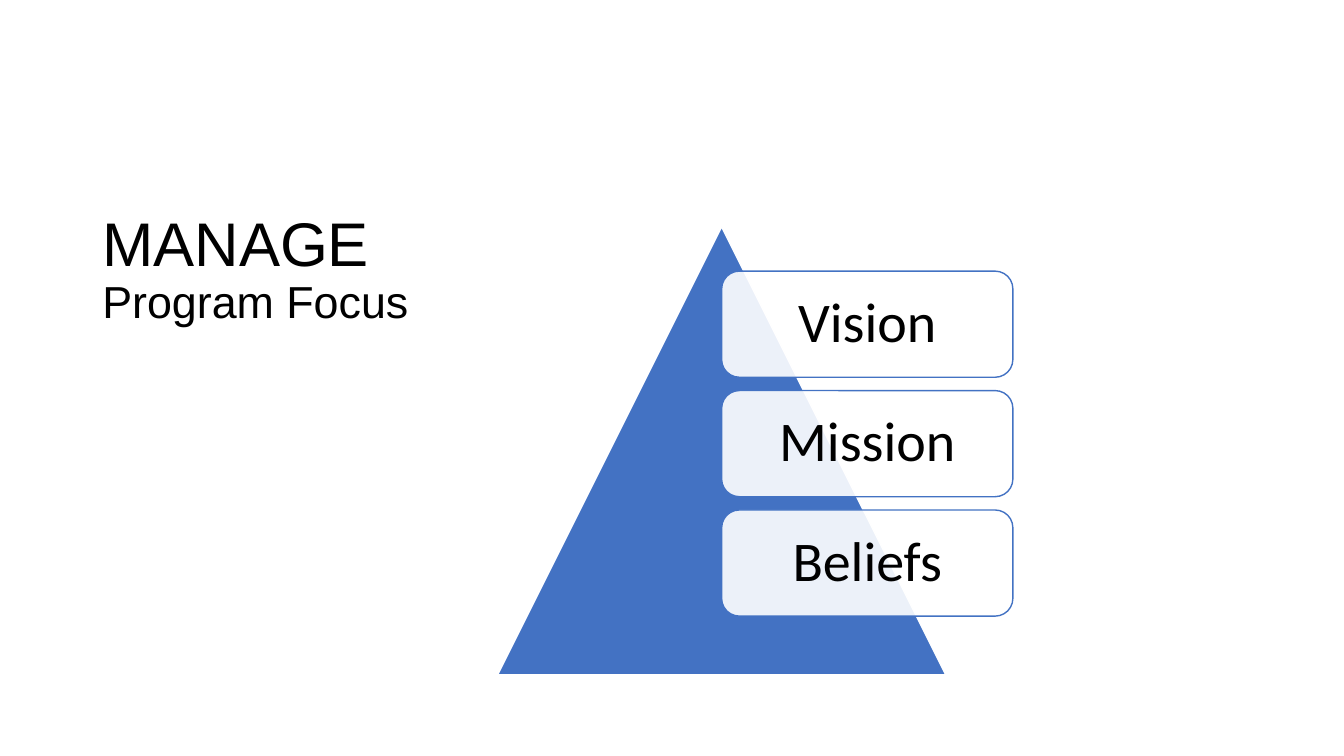
"""Build the MANAGE program focus slide: a title and a pyramid with three cards."""
from dataclasses import dataclass

from lxml.etree import SubElement
from pptx import Presentation
from pptx.dml.color import RGBColor as RGB
from pptx.enum.shapes import MSO_SHAPE as SHAPE
from pptx.enum.text import MSO_ANCHOR as ANCHOR, PP_ALIGN as ALIGN
from pptx.oxml.ns import qn
from pptx.util import Pt

TITLE = ("MANAGE", "Program Focus")
CARDS = ["Vision", "Mission", "Beliefs"]


@dataclass(frozen=True)
class Theme:
    """Colours, fonts and type sizes."""
    blue: RGB = RGB(0x43, 0x72, 0xC3)
    white: RGB = RGB(0xFF, 0xFF, 0xFF)
    black: RGB = RGB(0, 0, 0)
    title_font: str = "Arial"
    card_font: str = "Calibri"
    title_sizes: tuple = (44, 32)
    card_size: int = 40
    card_opacity: int = 90


T = Theme()
TITLE_BOX = (66, 141, 828, 104.5)
PYRAMID_X, PYRAMID_Y, PYRAMID_SIDE = 355.5, 162, 320
CARD_X = PYRAMID_X + PYRAMID_SIDE / 2
CARD_Y, CARD_W, CARD_H, CARD_GAP = 193.7, 208, 75.8, 9.5
CARD_INSET = 15.6


def add_shape(slide, kind, box, fill, line):
    sp = slide.shapes.add_shape(kind, *map(Pt, box))
    sp.shadow.inherit = False
    sp.fill.solid()
    sp.fill.fore_color.rgb = fill
    sp.line.color.rgb = line
    sp.line.width = Pt(1)
    return sp


def style(r, font, size):
    r.font.name = font
    r.font.size = Pt(size)
    r.font.color.rgb = T.black


def add_title(slide):
    tf = slide.shapes.add_textbox(*map(Pt, TITLE_BOX)).text_frame
    tf.word_wrap = True
    tf.vertical_anchor = ANCHOR.MIDDLE
    p = tf.paragraphs[0]
    p.text = "\v".join(TITLE)
    p.line_spacing = 0.9
    for r, size in zip(p.runs, T.title_sizes):
        style(r, T.title_font, size)


def add_card(slide, i, label):
    box = (CARD_X, CARD_Y + i * (CARD_H + CARD_GAP), CARD_W, CARD_H)
    sp = add_shape(slide, SHAPE.ROUNDED_RECTANGLE, box, T.white, T.blue)
    color = sp.fill._xPr.find(qn("a:solidFill"))[0]
    SubElement(color, qn("a:alpha"), val=str(T.card_opacity * 1000))
    tf = sp.text_frame
    tf.word_wrap = True
    tf.vertical_anchor = ANCHOR.MIDDLE
    tf.margin_left = tf.margin_right = Pt(CARD_INSET)
    tf.margin_top = tf.margin_bottom = Pt(CARD_INSET)
    p = tf.paragraphs[0]
    p.text = label
    p.alignment = ALIGN.CENTER
    p.line_spacing = 0.9
    style(p.runs[0], T.card_font, T.card_size)


def main():
    prs = Presentation()
    prs.slide_width, prs.slide_height = Pt(960), Pt(540)
    slide = prs.slides.add_slide(prs.slide_layouts[6])
    add_title(slide)
    pyramid = (PYRAMID_X, PYRAMID_Y, PYRAMID_SIDE, PYRAMID_SIDE)
    add_shape(slide, SHAPE.ISOSCELES_TRIANGLE, pyramid, T.blue, T.white)
    for i, label in enumerate(CARDS):
        add_card(slide, i, label)
    prs.save("out.pptx")


if __name__ == "__main__":
    main()
